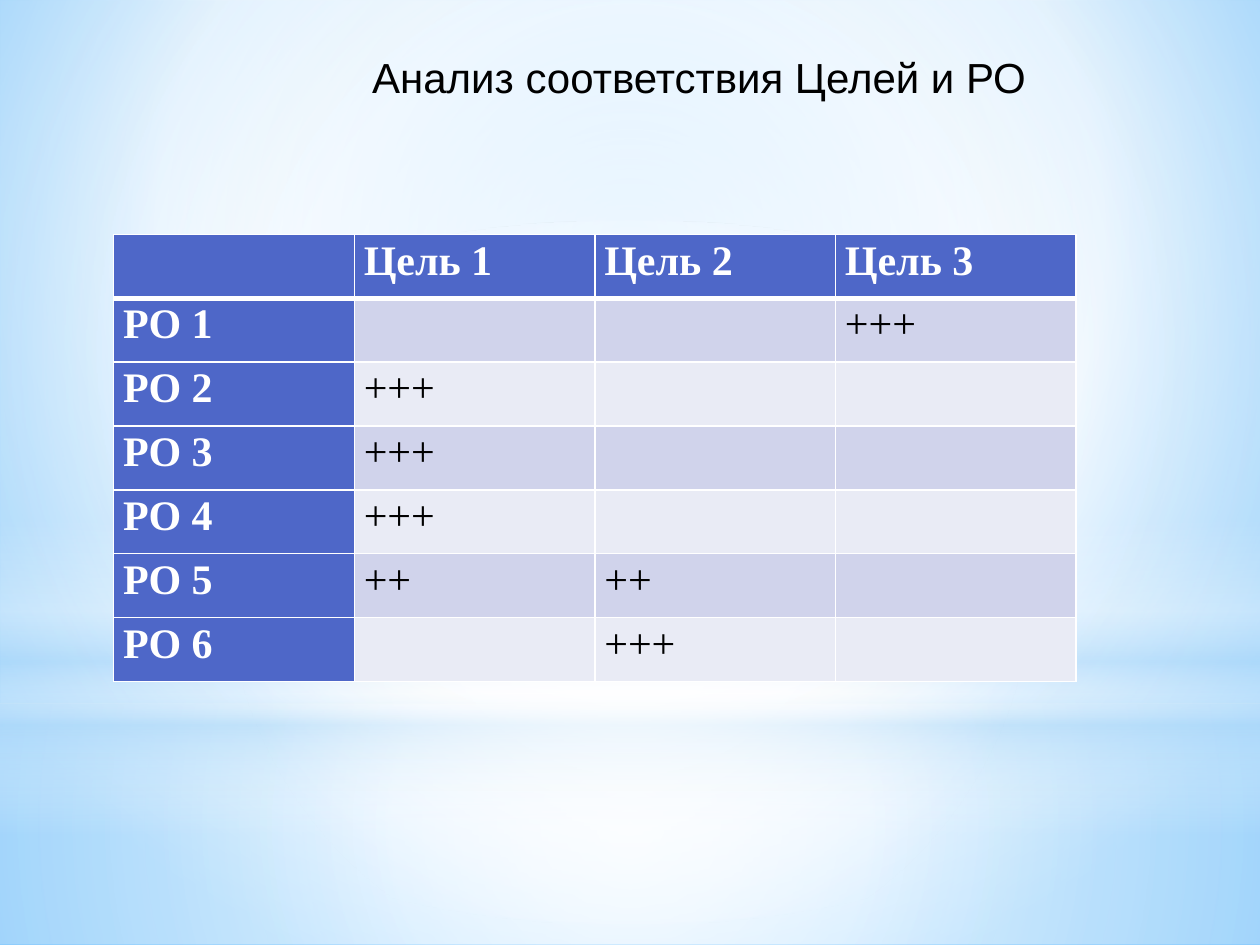
from lxml import etree
from pptx import Presentation
from pptx.dml.color import RGBColor
from pptx.enum import shapes, text
from pptx.oxml import ns
from pptx.util import Pt

WHITE = RGBColor(0xFF, 0xFF, 0xFF)
BLACK = RGBColor(0x00, 0x00, 0x00)
INDIGO = RGBColor(0x4E, 0x67, 0xC8)
LAVENDER = RGBColor(0xD0, 0xD3, 0xEB)
PALE = RGBColor(0xE9, 0xEB, 0xF5)
MIST = RGBColor(0xB4, 0xDC, 0xFA)
SKY = RGBColor(0x9E, 0xD5, 0xFF)
AZURE = RGBColor(0x5B, 0xB9, 0xFF)

CENTRE = (50, 50, 50, 50)
GOALS = ["", "Цель 1", "Цель 2", "Цель 3"]
OUTCOMES = [
    ["РО 1", "", "", "+++"],
    ["РО 2", "+++", "", ""],
    ["РО 3", "+++", "", ""],
    ["РО 4", "+++", "", ""],
    ["РО 5", "++", "++", ""],
    ["РО 6", "", "+++", ""],
]


def add(parent, tag, **attributes):
    values = {name: str(value) for name, value in attributes.items()}
    return etree.SubElement(parent, ns.qn(tag), values)


def gradient(holder, stops, focus=None):
    solid = holder.find(ns.qn("a:solidFill"))
    fill = etree.Element(ns.qn("a:gradFill"), rotWithShape="1")
    stop_list = add(fill, "a:gsLst")
    for position, color, opacity in stops:
        stop = add(stop_list, "a:gs", pos=position * 1000)
        shade = add(stop, "a:srgbClr", val=color)
        if opacity < 100:
            add(shade, "a:alpha", val=opacity * 1000)
    if focus:
        sides = {side: value * 1000 for side, value in zip("ltrb", focus)}
        add(add(fill, "a:path", path="circle"), "a:fillToRect", **sides)
    else:
        add(fill, "a:lin", ang=90 * 60000, scaled=0)
    holder.replace(solid, fill)


def write(frame, words, font="Arial", size=24, color=BLACK, bold=False,
          align=text.PP_ALIGN.CENTER, spacing=None):
    paragraph = frame.paragraphs[0]
    paragraph.alignment = align
    paragraph.line_spacing = spacing
    run = paragraph.add_run()
    run.text = words
    run.font.name = font
    run.font.size = Pt(size)
    run.font.bold = bold
    run.font.color.rgb = color


class Deck:
    cell_style = dict(font="Times New Roman", align=text.PP_ALIGN.JUSTIFY, spacing=1.07)

    def __init__(self, width, height):
        self.show = Presentation()
        self.show.slide_width, self.show.slide_height = Pt(width), Pt(height)
        self.slide = self.show.slides.add_slide(self.show.slide_layouts[6])

    def backdrop(self, stops, focus):
        self.slide.background.fill.solid()
        self.slide.background.fill.fore_color.rgb = WHITE
        holder = next(self.slide.element.iter(ns.qn("p:bgPr")))
        gradient(holder, stops, focus)

    def glow(self, kind, top, height, stops, focus=CENTRE):
        haze = self.slide.shapes.add_shape(kind, 0, Pt(top), self.show.slide_width, Pt(height))
        haze.shadow.inherit = False
        haze.line.fill.background()
        haze.fill.solid()
        haze.fill.fore_color.rgb = WHITE
        gradient(haze.element.spPr, stops, focus)

    def title(self, left, top, width, height, words):
        heading = self.slide.shapes.add_textbox(Pt(left), Pt(top), Pt(width), Pt(height))
        heading.text_frame.word_wrap = True
        heading.text_frame.auto_size = text.MSO_AUTO_SIZE.SHAPE_TO_FIT_TEXT
        write(heading.text_frame, words)

    def cell(self, cell, words, fill, borders, **style):
        cell.fill.solid()
        cell.fill.fore_color.rgb = fill
        properties = cell._tc.get_or_add_tcPr()
        for index, (side, weight) in enumerate(borders.items()):
            edge = etree.Element(ns.qn("a:ln" + side), w=str(Pt(weight)))
            add(add(edge, "a:solidFill"), "a:srgbClr", val=WHITE)
            properties.insert(index, edge)
        if words:
            cell.margin_left = cell.margin_right = Pt(5.4)
            cell.margin_top = cell.margin_bottom = 0
            write(cell.text_frame, words, **self.cell_style, **style)

    def matrix(self, left, top, column_width, row_height, rows):
        columns = len(rows[0])
        grid = self.slide.shapes.add_table(
            len(rows), columns, Pt(left), Pt(top),
            Pt(column_width * columns), Pt(row_height * len(rows))).table
        for column in grid.columns:
            column.width = Pt(column_width)
        for r, row in enumerate(rows):
            grid.rows[r].height = Pt(row_height)
            borders = dict(L=1, R=1, T=3 if r == 1 else 1, B=3 if r == 0 else 1)
            for c, words in enumerate(row):
                is_label = r == 0 or c == 0
                fill = INDIGO if is_label else LAVENDER if r % 2 else PALE
                self.cell(grid.cell(r, c), words, fill, borders,
                          color=WHITE if is_label else BLACK, bold=is_label)


def main():
    deck = Deck(720, 540)
    rectangle, oval = shapes.MSO_SHAPE.RECTANGLE, shapes.MSO_SHAPE.OVAL
    deck.backdrop([(0, SKY, 100), (60, WHITE, 100), (100, AZURE, 100)], (20, 10, 20, 60))
    deck.glow(rectangle, 402, 138, [(0, WHITE, 91), (37, WHITE, 76), (100, MIST, 79)])
    deck.glow(rectangle, 0, 402, [(0, WHITE, 89), (48, WHITE, 62), (100, MIST, 79)])
    deck.glow(rectangle, 297, 180, [
        (0, WHITE, 0), (29, WHITE, 30), (45, MIST, 40),
        (55, WHITE, 26), (65, MIST, 60), (100, WHITE, 0)], focus=None)
    deck.glow(oval, 126, 402, [(0, WHITE, 100), (56, WHITE, 0)])
    deck.title(139, 26, 521, 36.5, "Анализ соответствия Целей и РО")
    deck.matrix(65, 134, 137.5, 36.5, [GOALS] + OUTCOMES)
    deck.show.save("out.pptx")


if __name__ == "__main__":
    main()
